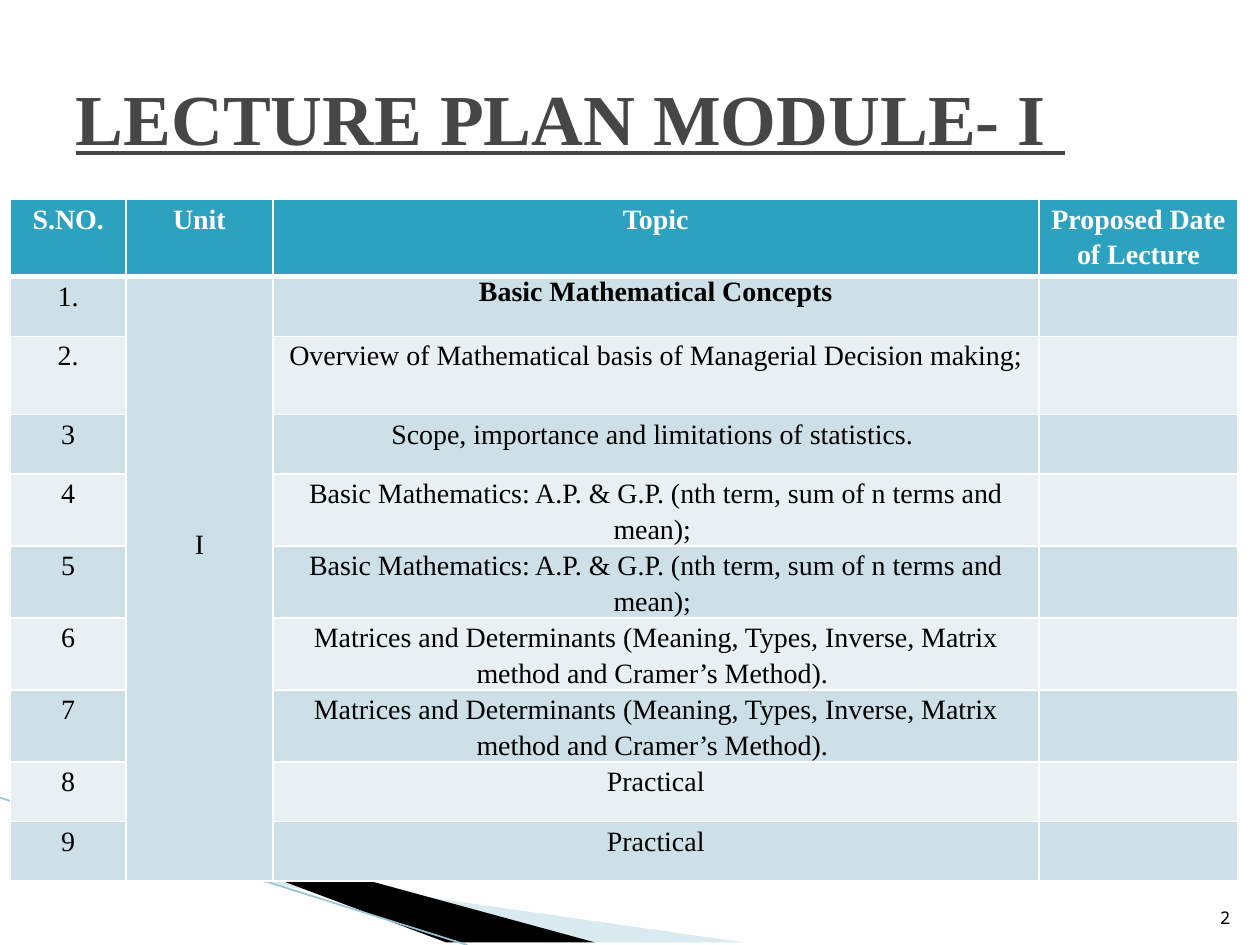
from lxml import etree
from pptx import Presentation
from pptx.dml.color import RGBColor
from pptx.enum.text import MSO_ANCHOR, MSO_AUTO_SIZE, PP_ALIGN
from pptx.oxml.ns import qn
from pptx.util import Cm, Pt

LEFT, CENTER, RIGHT = PP_ALIGN.LEFT, PP_ALIGN.CENTER, PP_ALIGN.RIGHT
MIDDLE, BOTTOM = MSO_ANCHOR.MIDDLE, MSO_ANCHOR.BOTTOM
SERIF, SANS = "Times New Roman", "Noto Sans Mono"
COLORS = {
    "title": "464646", "header": "2DA2BF", "odd": "CDE0E8", "even": "E8F0F4",
    "white": "FFFFFF", "black": "000000", "wedge": "A0CBDC", "edge": "97C5D8",
}

TITLE = "LECTURE PLAN MODULE- I "
PAGE_NUMBER = "2"
HEADERS = ["S.NO.", "Unit", "Topic", "Proposed Date of Lecture"]
UNIT = "I"
PROGRESSIONS = "Basic Mathematics: A.P. & G.P. (nth term, sum of n terms and mean); "
MATRICES = ("Matrices and Determinants (Meaning, Types, Inverse, "
            "Matrix method and Cramer’s Method). ")
LECTURES = [
    ("1.", "Basic Mathematical Concepts"),
    ("2.", "Overview of Mathematical basis of Managerial Decision making;"),
    ("3", "Scope, importance and limitations of statistics. "),
    ("4", PROGRESSIONS),
    ("5", PROGRESSIONS),
    ("6", MATRICES),
    ("7", MATRICES),
    ("8", "Practical"),
    ("9", "Practical"),
]
COLUMN_WIDTHS = [2.33, 2.96, 15.44, 4.02]
ROW_HEIGHTS = [1.56, 1.2, 1.58, 1.2, 1.45, 1.45, 1.45, 1.45, 1.2, 1.2]

# Corner decoration: outline in cm, colour, opacity in percent
WEDGES = [
    ([(1.4, 16.52), (15.11, 19.05), (11.58, 19.05)], "wedge", 40),
    ([(1.35, 16.48), (11.61, 19.05), (9.45, 19.05)], "black", 100),
]


def rgb(name):
    return RGBColor.from_string(COLORS[name])


def write(frame, text, size=16, font=SERIF, color="black", bold=False,
          underline=False, align=CENTER, spacing=None):
    para = frame.paragraphs[0]
    para.alignment = align
    if spacing:
        para.line_spacing = spacing
    span = para.add_run()
    span.text = text
    span.font.size, span.font.name = Pt(size), font
    span.font.bold, span.font.underline = bold, underline
    span.font.color.rgb = rgb(color)


def add_wedge(page, points, color, opacity):
    builder = page.shapes.build_freeform(*points[0], scale=Cm(1))
    builder.add_line_segments(points[1:], close=True)
    wedge = builder.convert_to_shape()
    wedge.shadow.inherit = False
    wedge.line.fill.background()
    wedge.fill.solid()
    wedge.fill.fore_color.rgb = rgb(color)
    if opacity < 100:
        value = wedge.fill._xPr.find(".//" + qn("a:srgbClr"))
        etree.SubElement(value, qn("a:alpha"), val=str(opacity * 1000))


def add_edge(page):
    edge = page.shapes.add_connector(1, Cm(0), Cm(16.08), Cm(9.42), Cm(19.05))
    edge.line.color.rgb = rgb("edge")
    edge.line.width = Pt(0.95)
    etree.SubElement(edge._element.spPr, qn("a:effectLst"))


def style_cell(cell, color, bottom=1):
    """Set margins, white borders and then the fill, in schema order."""
    cell.margin_left = cell.margin_right = Cm(0.18)
    cell.margin_top = cell.margin_bottom = 0
    properties = cell._tc.get_or_add_tcPr()
    for side, width in (("L", 1), ("R", 1), ("T", 1), ("B", bottom)):
        line = etree.SubElement(properties, qn("a:ln" + side), w=str(Pt(width)))
        fill = etree.SubElement(line, qn("a:solidFill"))
        etree.SubElement(fill, qn("a:srgbClr"), val=COLORS["white"])
    cell.fill.solid()
    cell.fill.fore_color.rgb = rgb(color)


def add_plan(page):
    table = page.shapes.add_table(
        len(ROW_HEIGHTS), len(COLUMN_WIDTHS), Cm(0.21), Cm(4.02),
        Cm(sum(COLUMN_WIDTHS)), Cm(sum(ROW_HEIGHTS))).table
    for column, width in zip(table.columns, COLUMN_WIDTHS):
        column.width = Cm(width)
    for row, height in zip(table.rows, ROW_HEIGHTS):
        row.height = Cm(height)

    for index, header in enumerate(HEADERS):
        cell = table.cell(0, index)
        style_cell(cell, "header", bottom=3)
        write(cell.text_frame, header, color="white", bold=True, spacing=1.15)
    for row, (number, topic) in enumerate(LECTURES, start=1):
        for index in range(len(HEADERS)):
            style_cell(table.cell(row, index), "odd" if row % 2 else "even")
        first = row == 1
        write(table.cell(row, 0).text_frame, number, spacing=1.15)
        write(table.cell(row, 2).text_frame, topic, bold=first,
              spacing=None if first else 1.15)

    unit = table.cell(1, 1)
    unit.merge(table.cell(len(LECTURES), 1))
    unit.margin_top = Cm(5)
    write(unit.text_frame, UNIT, spacing=1.15)


def main():
    deck = Presentation()
    deck.slide_width, deck.slide_height = Cm(25.4), Cm(19.05)
    page = deck.slides.add_slide(deck.slide_layouts[5])

    for points, color, opacity in WEDGES:
        add_wedge(page, points, color, opacity)
    add_edge(page)
    add_plan(page)

    title = page.shapes.title
    title.left, title.top = Cm(1.27), Cm(0.76)
    title.width, title.height = Cm(22.86), Cm(3.18)
    title.text_frame.auto_size = MSO_AUTO_SIZE.NONE
    title.text_frame.vertical_anchor = MIDDLE
    write(title.text_frame, TITLE, size=41, color="title", bold=True,
          underline=True, align=LEFT)

    box = page.shapes.add_textbox(Cm(24.03), Cm(17.81), Cm(1.02), Cm(1.02))
    box.text_frame.word_wrap = True
    box.text_frame.vertical_anchor = BOTTOM
    write(box.text_frame, PAGE_NUMBER, size=10, font=SANS, align=RIGHT)

    deck.save("out.pptx")


if __name__ == "__main__":
    main()
